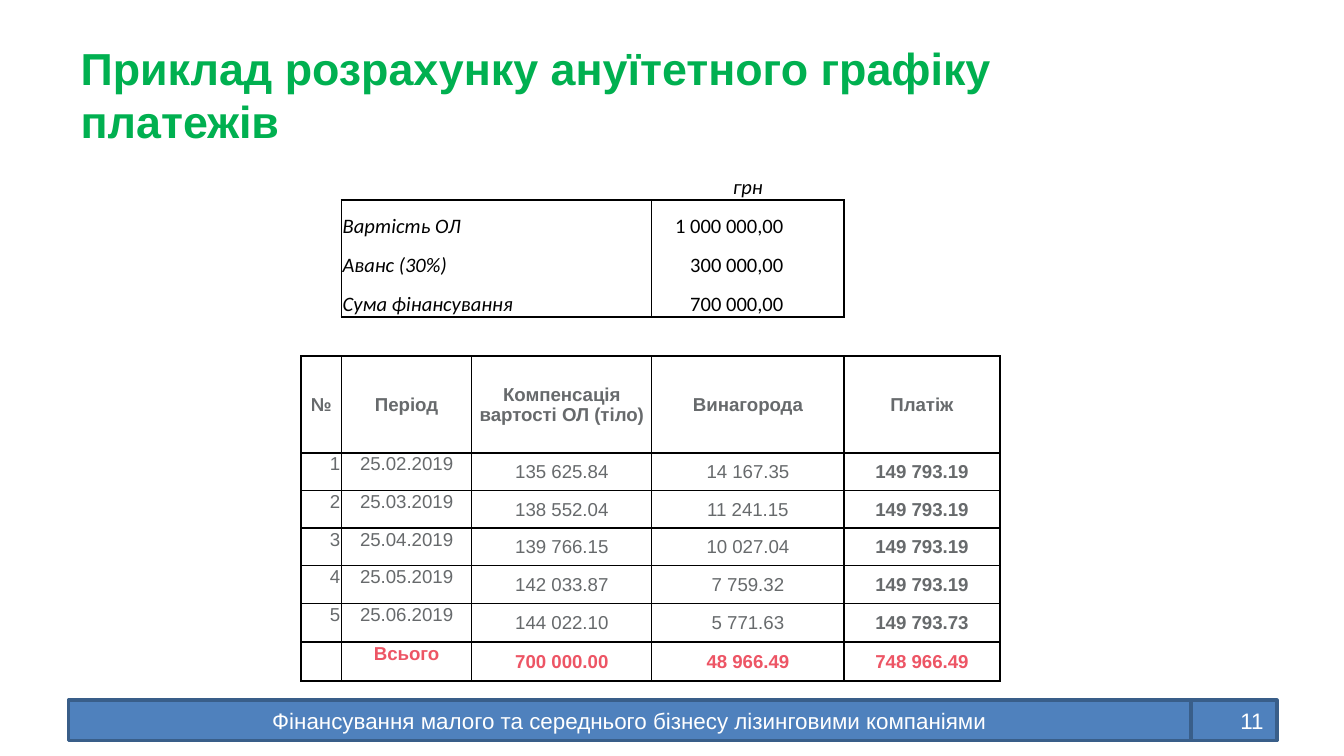
from lxml import etree
from pptx import Presentation
from pptx.dml.color import RGBColor
from pptx.enum import shapes, text
from pptx.oxml import ns
from pptx.util import Inches, Pt

GREEN = RGBColor(0x00, 0xB0, 0x50)
BLUE = RGBColor(0x4F, 0x81, 0xBD)
NAVY = RGBColor(0x39, 0x5E, 0x89)
WHITE = RGBColor(0xFF, 0xFF, 0xFF)
BLACK = RGBColor(0x00, 0x00, 0x00)
GREY = RGBColor(0x67, 0x6A, 0x6C)
RED = RGBColor(0xED, 0x55, 0x65)

LEFT, MID, RIGHT = text.PP_ALIGN.LEFT, text.PP_ALIGN.CENTER, text.PP_ALIGN.RIGHT
TOP, CORE, BASE = (text.MSO_ANCHOR.TOP, text.MSO_ANCHOR.MIDDLE,
                   text.MSO_ANCHOR.BOTTOM)
PLAIN = "{2D5ABB26-0587-4C30-8999-92F81FD0307C}"

COLS = [0.3, 0.97, 1.34, 1.43, 1.16]
ROWS = [0.29] * 5 + [0.72] + [0.28] * 4 + [0.29] * 2
LOAN = [
    ("Вартість ОЛ", "1 000 000,00"),
    ("Аванс (30%)", "300 000,00"),
    ("Сума фінансування", "700 000,00"),
]
PLAN = [
    ("№", "Період", "Компенсація вартості ОЛ (тіло)", "Винагорода", "Платіж"),
    ("1", "25.02.2019", "135 625.84", "14 167.35", "149 793.19"),
    ("2", "25.03.2019", "138 552.04", "11 241.15", "149 793.19"),
    ("3", "25.04.2019", "139 766.15", "10 027.04", "149 793.19"),
    ("4", "25.05.2019", "142 033.87", "7 759.32", "149 793.19"),
    ("5", "25.06.2019", "144 022.10", "5 771.63", "149 793.73"),
    ("", "Всього", "700 000.00", "48 966.49", "748 966.49"),
]


def write(frame, words, size, color, align, face="Arial", bold=False, slant=False):
    """Add one formatted run to the first paragraph of a frame."""
    para = frame.paragraphs[0]
    para.alignment = align
    run = para.add_run()
    run.text = words
    font = run.font
    font.name, font.size, font.bold, font.italic = face, Pt(size), bold, slant
    font.color.rgb = color


def edge(cell, **sides):
    """Draw the borders given as side letter and points, and clear the rest."""
    props = cell._tc.get_or_add_tcPr()
    for side in "LRTB":
        line = etree.SubElement(props, ns.qn("a:ln" + side))
        if side in sides:
            line.set("w", str(Pt(sides[side])))
            fill = etree.SubElement(line, ns.qn("a:solidFill"))
            etree.SubElement(fill, ns.qn("a:srgbClr"), val=str(BLACK))
        else:
            etree.SubElement(line, ns.qn("a:noFill"))


def title(slide, x, y, w, h):
    """Place the slide title in the given box."""
    head = slide.shapes.title
    head.left, head.top, head.width, head.height = map(Inches, (x, y, w, h))
    head.text_frame.vertical_anchor = CORE
    write(head.text_frame, "Приклад розрахунку ануїтетного графіку платежів",
          24, GREEN, LEFT, bold=True)


def loan(table):
    """Fill the loan summary in the upper rows."""
    unit = table.cell(0, 3)
    unit.vertical_anchor = BASE
    write(unit.text_frame, "грн", 11, BLACK, MID, "Calibri", slant=True)
    for col in range(5):
        edge(table.cell(0, col), **({"B": 1} if 0 < col < 4 else {}))
        edge(table.cell(4, col), B=1, **({"T": 1} if 0 < col < 4 else {}))
    last = len(LOAN)
    for row, (label, sum_) in enumerate(LOAN, 1):
        name, value = table.cell(row, 1), table.cell(row, 3)
        name.merge(table.cell(row, 2))
        value.margin_right = Inches(0.45)
        name.vertical_anchor = value.vertical_anchor = BASE
        write(name.text_frame, label, 11, BLACK, LEFT, "Calibri", slant=True)
        write(value.text_frame, sum_, 11, BLACK, RIGHT, "Calibri")
        ends = {}
        if row == 1:
            ends["T"] = 1
        if row == last:
            ends["B"] = 1
        edge(table.cell(row, 0), R=1)
        edge(name, L=1, R=0.75, **ends)
        edge(table.cell(row, 2), R=0.75, **ends)
        edge(value, L=0.75, R=1, **ends)
        edge(table.cell(row, 4), L=1)


def plan(table, first):
    """Fill the payment schedule from the given row down."""
    last = len(PLAN) - 1
    for row, items in enumerate(PLAN):
        for col, words in enumerate(items):
            cell = table.cell(first + row, col)
            cell.vertical_anchor = TOP if row and col < 2 else CORE
            if words:
                write(cell.text_frame, words, 10, RED if row == last else GREY,
                      RIGHT if row and col == 0 else MID,
                      bold=row in (0, last) or col == 4)
            edge(cell, L=0.75 if col else 1, R=1 if col == 4 else 0.75,
                 T=1 if row in (0, 1, last) else 0.75,
                 B=1 if row in (0, last - 1, last) else 0.75)


def grid(slide, x, y):
    """Place the table with the loan summary and the payment schedule."""
    frame = slide.shapes.add_table(len(ROWS), len(COLS), Inches(x), Inches(y),
                                   Inches(sum(COLS)), Inches(sum(ROWS)))
    table = frame.table
    table.first_row = table.horz_banding = False
    table._tbl.tblPr.find(ns.qn("a:tableStyleId")).text = PLAIN
    for col, width in zip(table.columns, COLS):
        col.width = Inches(width)
    for row, height in zip(table.rows, ROWS):
        row.height = Inches(height)
    for cell in table.iter_cells():
        cell.margin_left = cell.margin_right = cell.margin_top = Inches(0.01)
        cell.margin_bottom = 0
    loan(table)
    plan(table, 5)
    for cell in table.iter_cells():
        cell.fill.background()
        if not cell.text:
            para = cell.text_frame.paragraphs[0]._p
            etree.SubElement(para, ns.qn("a:endParaRPr"), sz="1000")


def footer(slide, x, y, w, h, page):
    """Place the footer bar with its page box at the right end."""
    course = "Фінансування малого та середнього бізнесу лізинговими компаніями"
    parts = [(x, w - page, course, MID), (x + w - page, page, "11", RIGHT)]
    for left, width, words, align in parts:
        box = slide.shapes.add_shape(shapes.MSO_SHAPE.RECTANGLE, Inches(left),
                                     Inches(y), Inches(width), Inches(h))
        box.shadow.inherit = False
        box.fill.solid()
        box.fill.fore_color.rgb = BLUE
        box.line.color.rgb = NAVY
        box.line.width = Pt(2)
        box.text_frame.word_wrap = True
        box.text_frame.vertical_anchor = CORE
        write(box.text_frame, words, 12, WHITE, align)


def main():
    """Build and save the slide."""
    deck = Presentation()
    deck.slide_width = Inches(10)
    deck.slide_height = deck.slide_width * 9 // 16
    slide = deck.slides.add_slide(deck.slide_layouts[5])
    title(slide, 0.5, 0.23, 7.81, 0.94)
    footer(slide, 0.51, 5.21, 8.99, 0.3, 0.64)
    grid(slide, 2.24, 1.2)
    deck.save("out.pptx")


if __name__ == "__main__":
    main()
